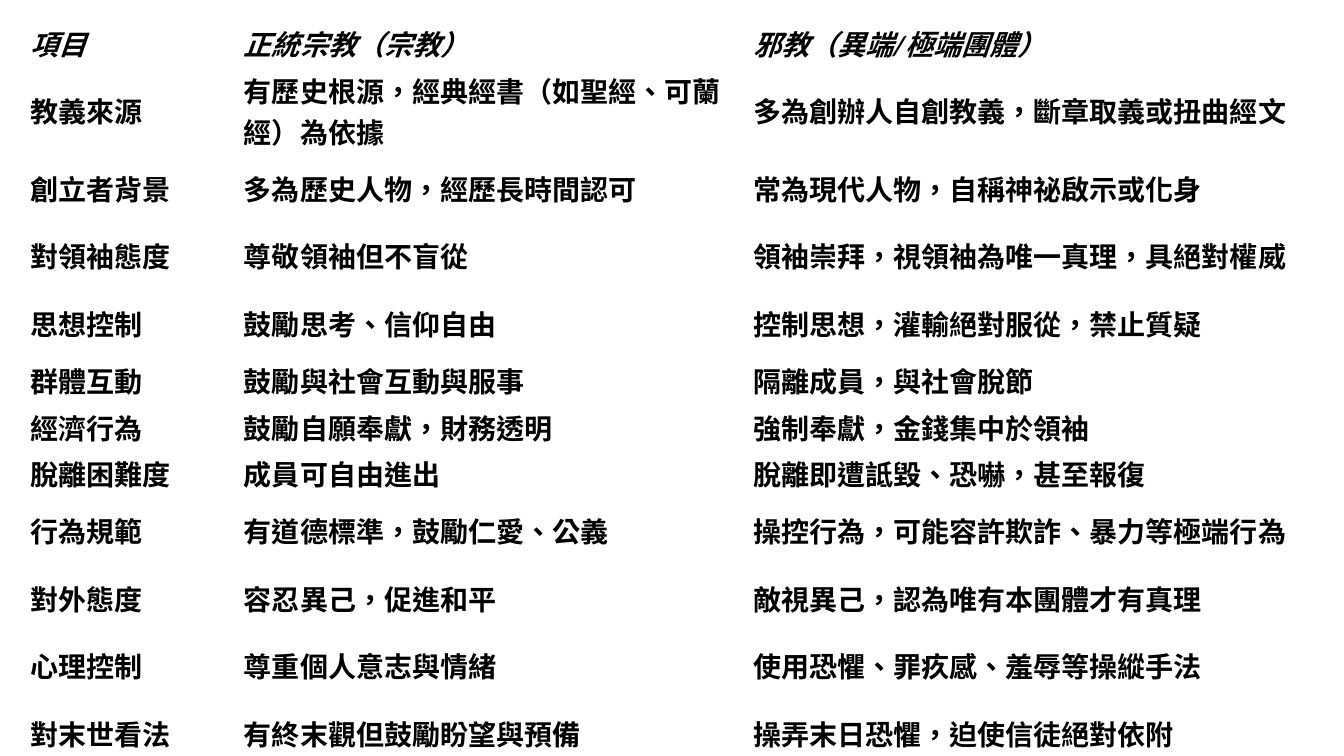
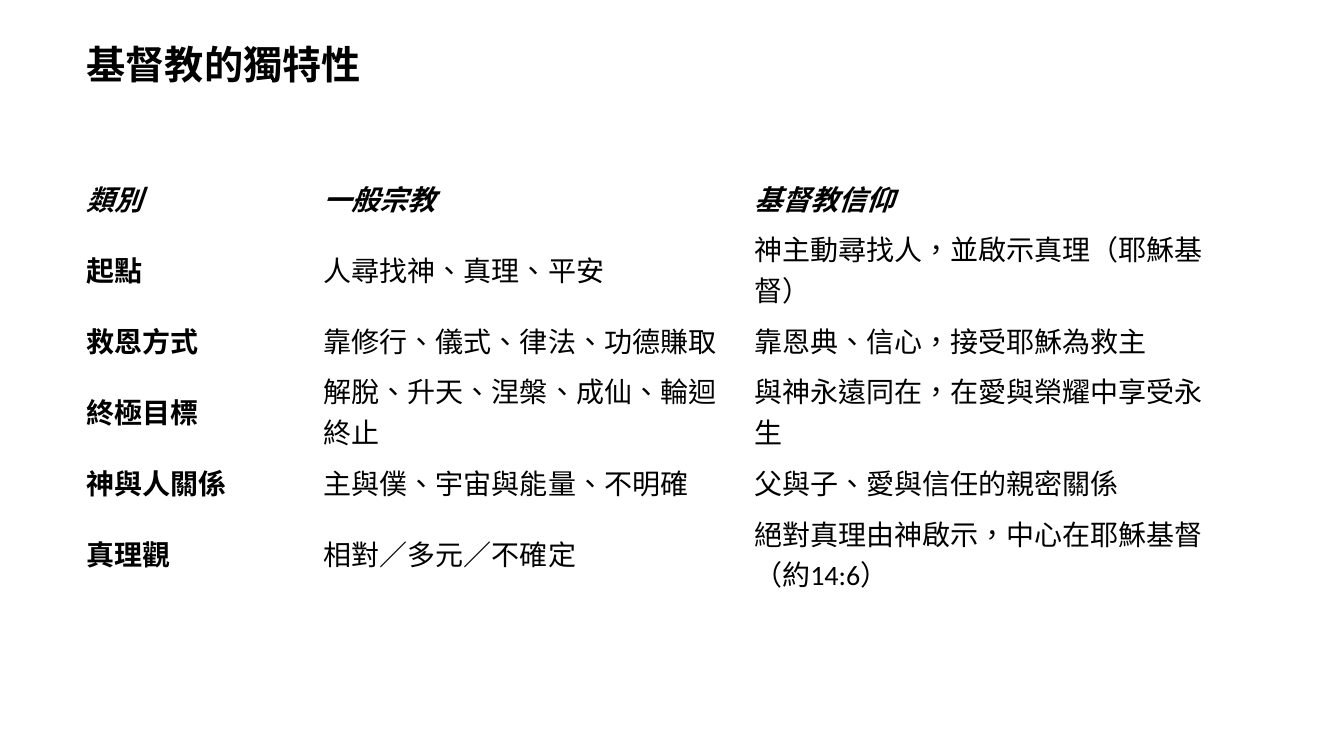
"""Build two comparison-table slides on religion, cults and Christianity."""
import pptx
import pptx.dml.color
import pptx.enum.lang
import pptx.enum.text
import pptx.util

EMU_PER_PX = 9144
SLIDE_SIZE = (1333, 750)
FONT = "Calibri"
INK = "000000"
PAPER = "FFFFFF"

CULT_COMPARISON = {
    "at": (23, 20),
    "columns": (212, 505, 571),
    "heights": (41, 75, 67, 67, 67, 41, 41, 41, 67, 67, 67, 67),
    "margins": (7, 3),
    "bold_body": True,
    "rows": [
        ("項目", "正統宗教（宗教）", "邪教（異端/極端團體）"),
        ("教義來源", "有歷史根源，經典經書（如聖經、可蘭經）為依據", "多為創辦人自創教義，斷章取義或扭曲經文"),
        ("創立者背景", "多為歷史人物，經歷長時間認可", "常為現代人物，自稱神祕啟示或化身"),
        ("對領袖態度", "尊敬領袖但不盲從", "領袖崇拜，視領袖為唯一真理，具絕對權威"),
        ("思想控制", "鼓勵思考、信仰自由", "控制思想，灌輸絕對服從，禁止質疑"),
        ("群體互動", "鼓勵與社會互動與服事", "隔離成員，與社會脫節"),
        ("經濟行為", "鼓勵自願奉獻，財務透明", "強制奉獻，金錢集中於領袖"),
        ("脫離困難度", "成員可自由進出", "脫離即遭詆毀、恐嚇，甚至報復"),
        ("行為規範", "有道德標準，鼓勵仁愛、公義", "操控行為，可能容許欺詐、暴力等極端行為"),
        ("對外態度", "容忍異己，促進和平", "敵視異己，認為唯有本團體才有真理"),
        ("心理控制", "尊重個人意志與情緒", "使用恐懼、罪疚感、羞辱等操縱手法"),
        ("對末世看法", "有終末觀但鼓勵盼望與預備", "操弄末日恐懼，迫使信徒絕對依附"),
    ],
}

CHRISTIAN_TITLE = "基督教的獨特性"
TITLE_BOX = (76, 27, 1150, 79)
CHRISTIAN_COMPARISON = {
    "at": (76, 171),
    "columns": (235, 427, 488),
    "heights": (50, 90, 50, 90, 50, 90),
    "margins": (10, 5),
    "bold_body": False,
    "rows": [
        ("類別", "一般宗教", "基督教信仰"),
        ("起點", "人尋找神、真理、平安", "神主動尋找人，並啟示真理（耶穌基督）"),
        ("救恩方式", "靠修行、儀式、律法、功德賺取", "靠恩典、信心，接受耶穌為救主"),
        ("終極目標", "解脫、升天、涅槃、成仙、輪迴終止", "與神永遠同在，在愛與榮耀中享受永生"),
        ("神與人關係", "主與僕、宇宙與能量、不明確", "父與子、愛與信任的親密關係"),
        ("真理觀", "相對／多元／不確定", "絕對真理由神啟示，中心在耶穌基督（約14:6）"),
    ],
}


def px(length):
    """Turn px into EMU."""
    return pptx.util.Emu(length * EMU_PER_PX)


def color(hex_code):
    """Turn a hex string into a colour."""
    return pptx.dml.color.RGBColor.from_string(hex_code)


def write(frame, text, size=20, bold=False, italic=False, spacing=None):
    """Write one formatted, left-aligned paragraph into a text frame."""
    paragraph = frame.paragraphs[0]
    paragraph.alignment = pptx.enum.text.PP_ALIGN.LEFT
    paragraph.line_spacing = spacing
    run = paragraph.add_run()
    run.text = text
    run.font.name = FONT
    run.font.size = pptx.util.Pt(size)
    run.font.bold = bold
    run.font.italic = italic
    run.font.color.rgb = color(INK)
    run.font.language_id = pptx.enum.lang.MSO_LANGUAGE_ID.TRADITIONAL_CHINESE


def add_slide(deck, layout):
    """Add a slide with the shared background."""
    slide = deck.slides.add_slide(deck.slide_layouts[layout])
    slide.background.fill.solid()
    slide.background.fill.fore_color.rgb = color(PAPER)
    return slide


def add_comparison(slide, comparison):
    """Add a plain table with an italic header and a bold first column."""
    rows, columns, heights = (comparison[key] for key in ("rows", "columns", "heights"))
    left, top = comparison["at"]
    side, edge = comparison["margins"]
    table = slide.shapes.add_table(
        len(rows), len(columns), px(left), px(top), px(sum(columns)), px(sum(heights))
    ).table
    table.first_row = table.horz_banding = False
    for column, width in zip(table.columns, columns):
        column.width = px(width)
    for row, height in zip(table.rows, heights):
        row.height = px(height)
    for row_index, texts in enumerate(rows):
        header = row_index == 0
        for column_index, text in enumerate(texts):
            cell = table.cell(row_index, column_index)
            cell.fill.background()
            cell.vertical_anchor = pptx.enum.text.MSO_ANCHOR.MIDDLE
            cell.margin_left = cell.margin_right = px(side)
            cell.margin_top = cell.margin_bottom = px(edge)
            bold = header or column_index == 0 or comparison["bold_body"]
            write(cell.text_frame, text, bold=bold, italic=header)


def main():
    """Build and save the deck."""
    deck = pptx.Presentation()
    deck.slide_width, deck.slide_height = map(px, SLIDE_SIZE)

    add_comparison(add_slide(deck, 6), CULT_COMPARISON)

    christian_slide = add_slide(deck, 5)
    title = christian_slide.shapes.title
    title.left, title.top, title.width, title.height = map(px, TITLE_BOX)
    title.text_frame.vertical_anchor = pptx.enum.text.MSO_ANCHOR.MIDDLE
    write(title.text_frame, CHRISTIAN_TITLE, size=28, bold=True, spacing=0.9)
    add_comparison(christian_slide, CHRISTIAN_COMPARISON)

    deck.save("out.pptx")


if __name__ == "__main__":
    main()
